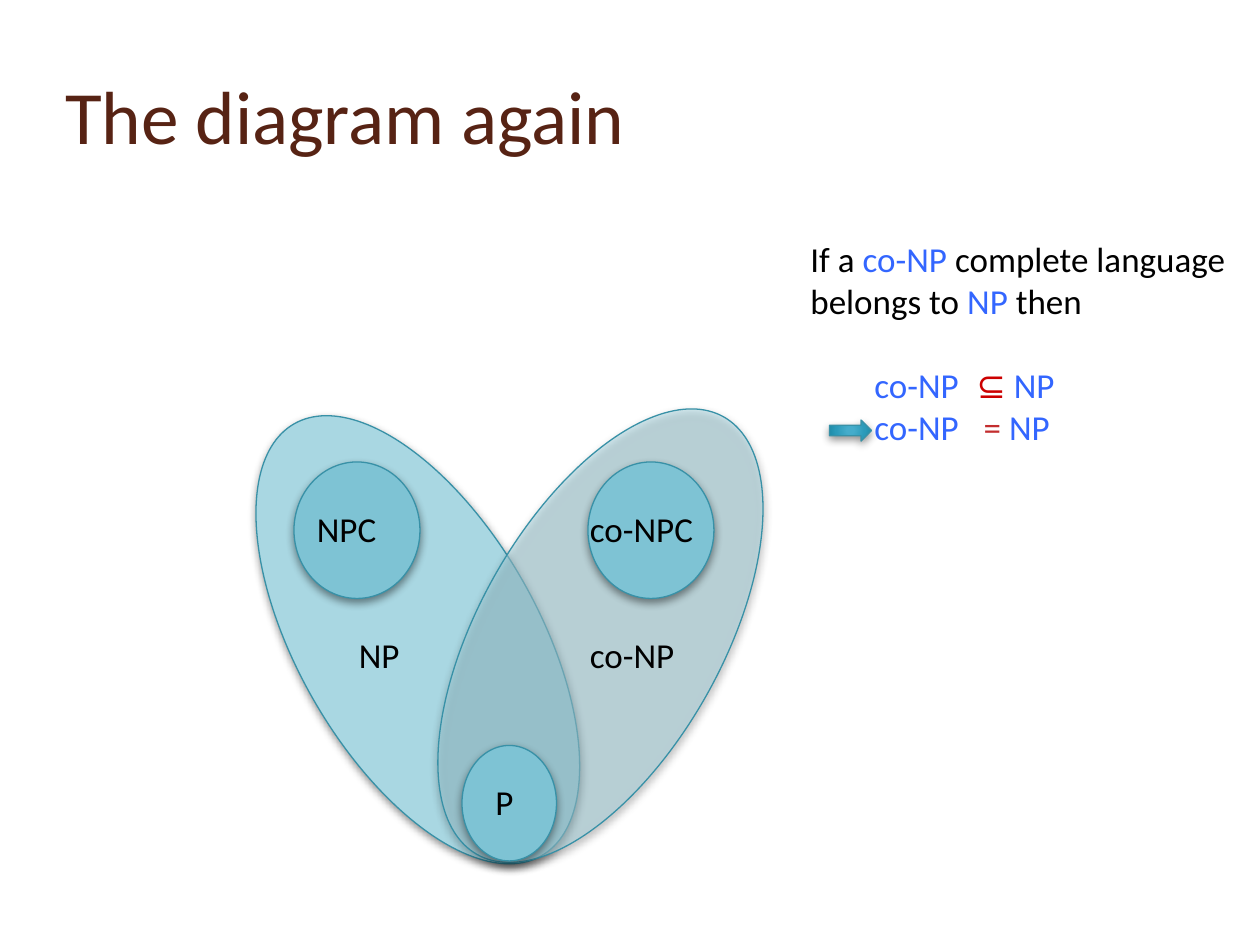
from dataclasses import dataclass
from typing import NamedTuple, Optional

from lxml.etree import SubElement
from pptx import Presentation
from pptx.dml.color import RGBColor
from pptx.enum.shapes import MSO_SHAPE as Preset
from pptx.enum.text import MSO_ANCHOR as Anchor, MSO_AUTO_SIZE as AutoSize, PP_ALIGN as Align
from pptx.oxml.ns import qn
from pptx.util import Pt


@dataclass(frozen=True)
class Theme:
    font: str = "Calibri"
    title_size: float = 43
    body_size: float = 20
    title: str = "572314"
    text: str = "000000"
    language: str = "3366FF"
    subset: str = "CC0000"
    equals: str = "C32D2E"
    large_set: str = "A9D7E2"
    small_set: str = "7EC3D4"
    outline: str = "3891A7"
    arrow_stops: tuple = ((0, "45ACCC"), (15, "45ACCB"), (62, "2B9AB9"), (97, "1C8AA7"), (100, "0E89A7"))


THEME = Theme()


class Box(NamedTuple):
    left: float
    top: float
    width: float
    height: float

    def lengths(self) -> list:
        return [Pt(value) for value in self]


class SetOval(NamedTuple):
    box: Box
    fill: str
    rotation: float = 0
    opacity: Optional[int] = None


class Label(NamedTuple):
    text: str
    box: Box


SET_OVALS = [
    SetOval(Box(170, 223.4, 137.5, 284.4), THEME.large_set, 330.2),
    SetOval(Box(273.6, 219.8, 139, 287), THEME.large_set, 29.4, 50),
    SetOval(Box(264, 426, 54, 66), THEME.small_set),
    SetOval(Box(168, 264, 72, 78), THEME.small_set),
    SetOval(Box(336, 264, 72, 78), THEME.small_set),
]
LABELS = [
    Label("NP", Box(198, 358.5, 42, 31.5)),
    Label("co-NP", Box(330, 358.5, 78, 31.5)),
    Label("P", Box(276, 442.5, 42, 31.5)),
    Label("NPC", Box(174, 286.5, 54, 31.5)),
    Label("co-NPC", Box(330, 286.5, 102, 31.5)),
]
CLAIM = [
    ("If a ", THEME.text),
    ("co-NP ", THEME.language),
    ("complete language belongs to ", THEME.text),
    ("NP", THEME.language),
    (" then", THEME.text),
]
# Each formula: sign, sign colour, tab position of the sign, space before
FORMULAS = [("⊆", THEME.subset, 95, 24), ("=", THEME.equals, 99, 0)]
FORMULA_INDENT = 36.5


def add_run(paragraph, text: str, *, color: str = THEME.text, size: float = THEME.body_size) -> None:
    run = paragraph.add_run()
    run.text = text
    run.font.name = THEME.font
    run.font.size = Pt(size)
    run.font.color.rgb = RGBColor.from_string(color)


def set_tabs(paragraph, positions: list) -> None:
    tab_list = SubElement(paragraph._p.get_or_add_pPr(), qn("a:tabLst"))
    for position in positions:
        SubElement(tab_list, qn("a:tab"), pos=str(Pt(position)), algn="l")


def add_text_frame(slide, box: Box):
    frame = slide.shapes.add_textbox(*box.lengths()).text_frame
    frame.word_wrap = True
    frame.auto_size = AutoSize.SHAPE_TO_FIT_TEXT
    return frame


def add_alpha(color_element, percent: int) -> None:
    SubElement(color_element, qn("a:alpha"), val=str(percent * 1000))


def add_outlined_shape(slide, preset, box: Box):
    """Add a preset shape with the thin outline and the soft shadow below."""
    shape = slide.shapes.add_shape(preset, *box.lengths())
    shape.line.color.rgb = RGBColor.from_string(THEME.outline)
    shape.line.width = Pt(0.75)
    shape.shadow.inherit = False
    effects = shape._element.spPr.find(qn("a:effectLst"))
    shadow = SubElement(effects, qn("a:outerShdw"), blurRad=str(Pt(5)), dist=str(Pt(2)),
                        dir="5400000", rotWithShape="0")
    add_alpha(SubElement(shadow, qn("a:srgbClr"), val="000000"), 43)
    return shape


def add_set_oval(slide, oval: SetOval) -> None:
    shape = add_outlined_shape(slide, Preset.OVAL, oval.box)
    shape.rotation = oval.rotation
    shape.fill.solid()
    shape.fill.fore_color.rgb = RGBColor.from_string(oval.fill)
    if oval.opacity is not None:
        add_alpha(shape._element.spPr.find(qn("a:solidFill"))[0], oval.opacity)


def add_arrow(slide, box: Box) -> None:
    """Add the block arrow with a radial gradient."""
    shape = add_outlined_shape(slide, Preset.RIGHT_ARROW, box)
    shape.fill.gradient()
    gradient = shape._element.spPr.find(qn("a:gradFill"))
    for child in list(gradient):
        gradient.remove(child)
    stops = SubElement(gradient, qn("a:gsLst"))
    for percent, color in THEME.arrow_stops:
        stop = SubElement(stops, qn("a:gs"), pos=str(percent * 1000))
        SubElement(stop, qn("a:srgbClr"), val=color)
    circle = SubElement(gradient, qn("a:path"), path="circle")
    SubElement(circle, qn("a:fillToRect"), l="50000", t="50000", r="50000", b="50000")


def add_title(slide, text: str, box: Box) -> None:
    title = slide.shapes.title
    title.left, title.top, title.width, title.height = box.lengths()
    title.text_frame.vertical_anchor = Anchor.MIDDLE
    paragraph = title.text_frame.paragraphs[0]
    paragraph.alignment = Align.LEFT
    add_run(paragraph, text, color=THEME.title, size=THEME.title_size)


def add_argument(slide, box: Box) -> None:
    frame = add_text_frame(slide, box)
    for text, color in CLAIM:
        add_run(frame.paragraphs[0], text, color=color)
    for sign, color, sign_tab, space_before in FORMULAS:
        paragraph = frame.add_paragraph()
        paragraph.space_before = Pt(space_before)
        set_tabs(paragraph, [FORMULA_INDENT, sign_tab])
        add_run(paragraph, "\tco-NP\t", color=THEME.language)
        add_run(paragraph, f"{sign} ", color=color)
        add_run(paragraph, "NP", color=THEME.language)


def main() -> None:
    presentation = Presentation()
    presentation.slide_width, presentation.slide_height = Pt(720), Pt(540)
    slide = presentation.slides.add_slide(presentation.slide_layouts[5])
    add_title(slide, "The diagram again", Box(30, 24, 636, 82.5))
    for oval in SET_OVALS:
        add_set_oval(slide, oval)
    for label in LABELS:
        add_run(add_text_frame(slide, label.box).paragraphs[0], label.text)
    add_argument(slide, Box(456, 132, 258, 174))
    add_arrow(slide, Box(474, 240, 24, 12))
    presentation.save("out.pptx")


if __name__ == "__main__":
    main()
